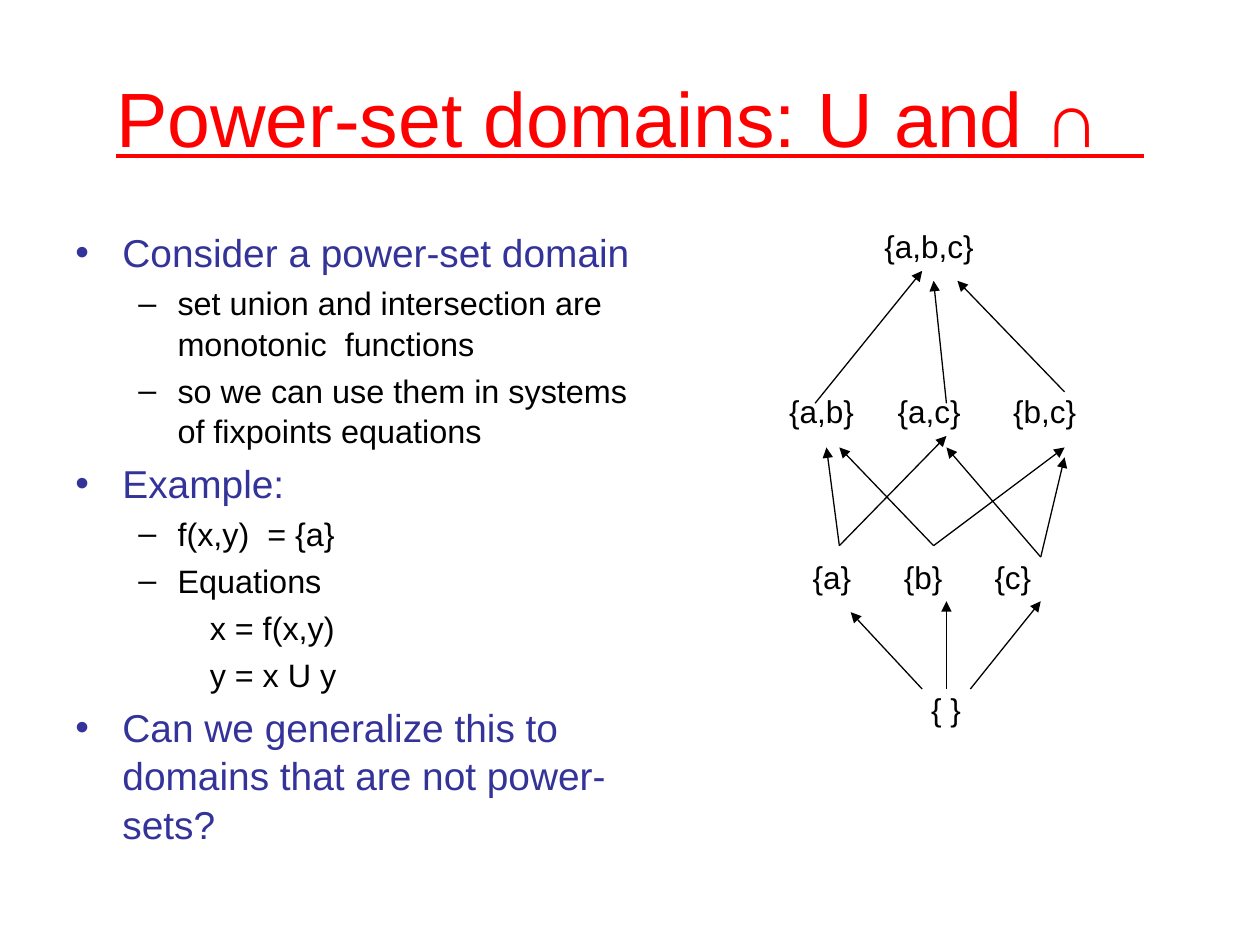
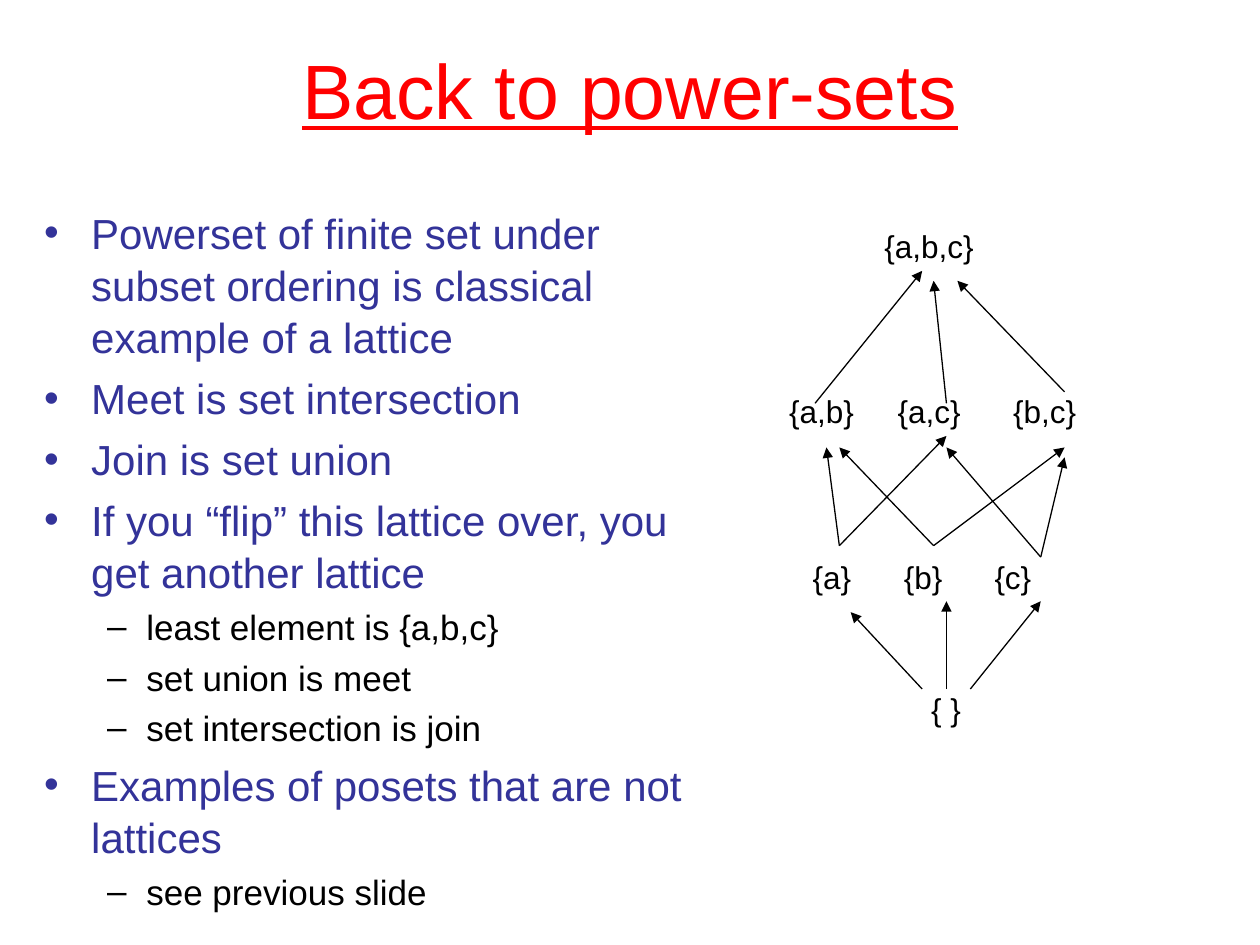
from lxml.etree import SubElement
from pptx import Presentation
from pptx.dml.color import RGBColor
from pptx.enum.shapes import MSO_CONNECTOR as Conn
from pptx.enum.text import MSO_ANCHOR as Anchor, PP_ALIGN as Align
from pptx.oxml.ns import qn
from pptx.util import Cm, Pt

RED = RGBColor(0xFF, 0x00, 0x00)
BLUE = RGBColor(0x33, 0x33, 0x99)
BLACK = RGBColor(0x00, 0x00, 0x00)

LEVELS = [
    {"bullet": "•", "margin": 0.95, "indent": -0.95, "color": BLUE},
    {"bullet": "–", "margin": 2.06, "indent": -0.79, "color": BLACK},
    {"bullet": None, "margin": 2.71, "indent": 0, "color": BLACK},
]

SLIDES = [
    {
        "title": "Power-set domains: U and ∩  ",
        "title_top": 0.76,
        "body_box": (1.27, 4.45, 11.86, 12.57),
        "sizes": (22.2, 18.5, 18.5),
        "body": [
            (0, "Consider a power-set domain"),
            (1, "set union and intersection are monotonic  functions"),
            (1, "so we can use them in systems of fixpoints equations"),
            (0, "Example:"),
            (1, "f(x,y)  = {a}"),
            (1, "Equations"),
            (2, "x = f(x,y)"),
            (2, "y = x U y"),
            (0, "Can we generalize this to domains that are not power-sets?"),
        ],
    },
    {
        "title": "Back to power-sets",
        "title_top": 0.2,
        "body_box": (0.64, 4.01, 14.17, 13.54),
        "sizes": (24, 20, 20),
        "body": [
            (0, "Powerset of finite set under subset ordering is classical example of a lattice"),
            (0, "Meet is set intersection"),
            (0, "Join is set union"),
            (0, "If you “flip” this lattice over, you get another lattice"),
            (1, "least element is {a,b,c}"),
            (1, "set union is meet"),
            (1, "set intersection is join"),
            (0, "Examples of posets that are not lattices"),
            (1, "see previous slide"),
        ],
    },
]

NODE_W, NODE_H = 2.4, 1.02
LATTICE_ROWS = [
    (13.79, [("{ }", 19.07)]),
    (11.13, [("{a}", 16.77), ("{b}", 18.61), ("{c}", 20.42)]),
    (7.77, [("{a,b}", 16.56), ("{a,c}", 18.73), ("{b,c}", 21.06)]),
    (4.45, [("{a,b,c}", 18.73)]),
]
ARROWS = [
    (18.59, 13.89, 17.15, 12.34),
    (19.08, 13.89, 19.08, 12.12),
    (19.56, 13.89, 20.98, 12.12),
    (16.92, 11.0, 16.66, 9.02),
    (18.82, 11.0, 16.92, 9.02),
    (16.92, 11.0, 19.08, 8.79),
    (20.98, 11.23, 19.08, 9.02),
    (18.82, 11.0, 21.46, 9.02),
    (20.98, 11.23, 21.46, 9.22),
    (16.43, 8.13, 18.59, 5.46),
    (19.08, 8.13, 18.82, 5.66),
    (21.46, 7.9, 19.3, 5.66),
]


def add_text_frame(shapes, box, wrap=True, anchor=Anchor.TOP):
    tf = shapes.add_textbox(*map(Cm, box)).text_frame
    tf.word_wrap = wrap
    tf.vertical_anchor = anchor
    return tf


def write(p, text, size, color, **formats):
    r = p.add_run()
    r.text = text
    r.font.color.rgb = color
    for name, value in {"name": "Arial", "size": Pt(size), **formats}.items():
        setattr(r.font, name, value)


prs = Presentation()
prs.slide_width, prs.slide_height = Cm(25.4), Cm(19.05)

for content in SLIDES:
    s = prs.slides.add_slide(prs.slide_layouts[6])

    tf = add_text_frame(s.shapes, (1.27, content["title_top"], 22.86, 3.18), anchor=Anchor.MIDDLE)
    p = tf.paragraphs[0]
    p.alignment = Align.CENTER
    write(p, content["title"], 44, RED, underline=True)

    tf = add_text_frame(s.shapes, content["body_box"])
    for i, (level, text) in enumerate(content["body"]):
        style, size = LEVELS[level], content["sizes"][level]
        p = tf.paragraphs[0] if i == 0 else tf.add_paragraph()
        p.level = min(level, 1)
        p.space_before = Pt(0.2 * size)
        p.line_spacing = 1.04
        pPr = p._p.get_or_add_pPr()
        pPr.set("marL", str(Cm(style["margin"])))
        pPr.set("indent", str(Cm(style["indent"])))
        if style["bullet"]:
            SubElement(pPr, qn("a:buFont"), typeface="Arial")
            SubElement(pPr, qn("a:buChar"), char=style["bullet"])
        else:
            SubElement(pPr, qn("a:buNone"))
        write(p, text, size, style["color"])

    lattice = s.shapes.add_group_shape().shapes
    for top, nodes in LATTICE_ROWS:
        for label, center in nodes:
            tf = add_text_frame(lattice, (center - NODE_W / 2, top, NODE_W, NODE_H), wrap=False)
            p = tf.paragraphs[0]
            p.alignment = Align.CENTER
            write(p, label, 18, BLACK)
    for ends in ARROWS:
        arrow = lattice.add_connector(Conn.STRAIGHT, *map(Cm, ends))
        arrow.line.color.rgb = BLACK
        arrow.line.width = Pt(0.75)
        SubElement(arrow.line._get_or_add_ln(), qn("a:tailEnd"), type="triangle")
        SubElement(arrow._element.spPr, qn("a:effectLst"))

prs.save("out.pptx")
